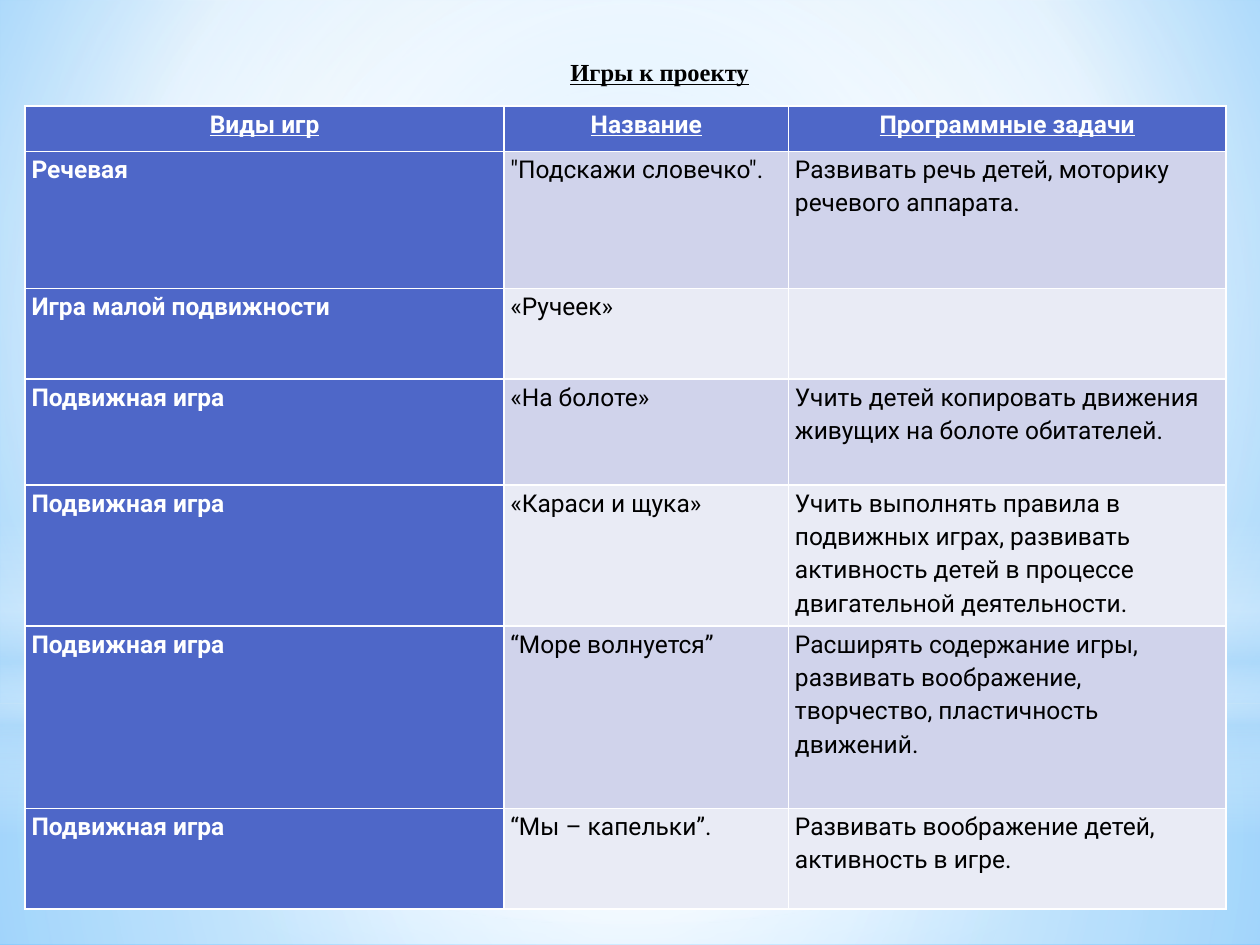
from lxml.etree import SubElement
from pptx import Presentation
from pptx.dml.color import RGBColor
from pptx.enum.shapes import MSO_SHAPE
from pptx.enum.text import MSO_ANCHOR, PP_ALIGN
from pptx.oxml.ns import qn
from pptx.util import Pt

COLORS = {
    "white": "FFFFFF", "black": "000000", "head": "4E67C8",
    "odd": "D0D3EB", "even": "E9EBF5",
    "sky": "9ED5FF", "deep": "5BB9FF", "haze": "B4DCFA",
}
CENTER = (50, 50, 50, 50)
ROWS = [
    ("Виды игр", "Название", "Программные задачи"),
    ("Речевая", "\"Подскажи словечко\".",
     "Развивать речь детей, моторику речевого аппарата."),
    ("Игра малой подвижности", "«Ручеек»", ""),
    ("Подвижная игра", "«На болоте»",
     "Учить детей копировать движения живущих на болоте обитателей."),
    ("Подвижная игра", "«Караси и щука»",
     "Учить выполнять правила в подвижных играх, развивать активность "
     "детей в процессе двигательной деятельности."),
    ("Подвижная игра", "“Море волнуется”",
     "Расширять содержание игры, развивать воображение, творчество, "
     "пластичность движений."),
    ("Подвижная игра", "“Мы – капельки”.",
     "Развивать воображение детей, активность в игре."),
]
WIDTHS = (273.6, 162.7, 249.8)
HEIGHTS = (26, 78.4, 51.8, 60.5, 80.6, 104.2, 57.6)
GLOWS = [
    (MSO_SHAPE.RECTANGLE, (0, 402, 720, 138),
     [(0, "white", 91), (37, "white", 76), (100, "haze", 79)], CENTER),
    (MSO_SHAPE.RECTANGLE, (0, 0, 720, 402),
     [(0, "white", 89), (48, "white", 62), (100, "haze", 79)], CENTER),
    (MSO_SHAPE.RECTANGLE, (0, 297, 720, 180),
     [(0, "white", 0), (29, "white", 30), (45, "haze", 40),
      (55, "white", 26), (65, "haze", 60), (100, "white", 0)], None),
    (MSO_SHAPE.OVAL, (0, 126, 720, 402),
     [(0, "white", 100), (56, "white", 0)], CENTER),
]


def rgb(name):
    """Return the named colour."""
    return RGBColor.from_string(COLORS[name])


def blend(parent, stops, focus):
    """Swap the solid fill of parent for a round or downward gradient."""
    old = parent.find(qn("a:solidFill"))
    grad = SubElement(parent, qn("a:gradFill"), rotWithShape="1")
    parent.replace(old, grad)
    stack = SubElement(grad, qn("a:gsLst"))
    for pos, name, alpha in stops:
        stop = SubElement(stack, qn("a:gs"), pos=str(pos * 1000))
        tint = SubElement(stop, qn("a:srgbClr"), val=COLORS[name])
        SubElement(tint, qn("a:alpha"), val=str(alpha * 1000))
    if focus:
        way = SubElement(grad, qn("a:path"), path="circle")
        sides = {side: str(part * 1000) for side, part in zip("ltrb", focus)}
        SubElement(way, qn("a:fillToRect"), **sides)
    else:
        SubElement(grad, qn("a:lin"), ang="5400000", scaled="0")


def add_sky(slide):
    """Paint the background and the glows over it."""
    slide.background.fill.solid()
    blend(slide.element.find(".//" + qn("p:bgPr")),
          [(0, "sky", 100), (60, "white", 100), (100, "deep", 100)],
          (20, 10, 20, 60))
    for kind, box, stops, focus in GLOWS:
        glow = slide.shapes.add_shape(kind, *map(Pt, box))
        glow.shadow.inherit = False
        glow.line.fill.background()
        glow.fill.solid()
        blend(glow.element.spPr, stops, focus)


def add_title(slide, box, text):
    """Place the title in front of the glows."""
    title = slide.shapes.title
    title.left, title.top, title.width, title.height = map(Pt, box)
    slide.shapes.element.append(title.element)
    frame = title.text_frame
    frame.text = text
    frame.word_wrap = True
    frame.vertical_anchor = MSO_ANCHOR.MIDDLE
    para = frame.paragraphs[0]
    para.alignment = PP_ALIGN.CENTER
    font = para.font
    font.name, font.size = "Times New Roman", Pt(14)
    font.bold = font.underline = True
    font.color.rgb = rgb("black")


def fill_cell(cell, text, row, col):
    """Write one cell in the style of its row and column."""
    head, bold = row == 0, row == 0 or col == 0
    cell.margin_left = cell.margin_right = Pt(3.6)
    cell.margin_top = cell.margin_bottom = 0
    cell.fill.solid()
    cell.fill.fore_color.rgb = rgb(
        "head" if bold else "odd" if row % 2 else "even")
    cell.text = text
    para = cell.text_frame.paragraphs[0]
    para.alignment = PP_ALIGN.CENTER if head else PP_ALIGN.LEFT
    para.line_spacing, para.space_after = 1.15, Pt(10)
    font = para.font
    font.name, font.size = "Roboto", Pt(14)
    font.bold, font.underline = bold, head
    font.color.rgb = rgb("white" if bold else "black")


def add_games(slide, box):
    """Place the table of games."""
    table = slide.shapes.add_table(
        len(ROWS), len(WIDTHS), *map(Pt, box)).table
    table.first_col = True
    for column, width in zip(table.columns, WIDTHS):
        column.width = Pt(width)
    for row, (texts, height) in enumerate(zip(ROWS, HEIGHTS)):
        table.rows[row].height = Pt(height)
        for col, text in enumerate(texts):
            fill_cell(table.cell(row, col), text, row, col)


def main():
    """Build the slide and save it."""
    deck = Presentation()
    deck.slide_width, deck.slide_height = Pt(720), Pt(540)
    slide = deck.slides.add_slide(deck.slide_layouts[5])
    add_sky(slide)
    add_games(slide, (14.4, 60.5, sum(WIDTHS), sum(HEIGHTS)))
    add_title(slide, (178.6, 28.8, 396.7, 24.5), "Игры к проекту")
    deck.save("out.pptx")


if __name__ == "__main__":
    main()
